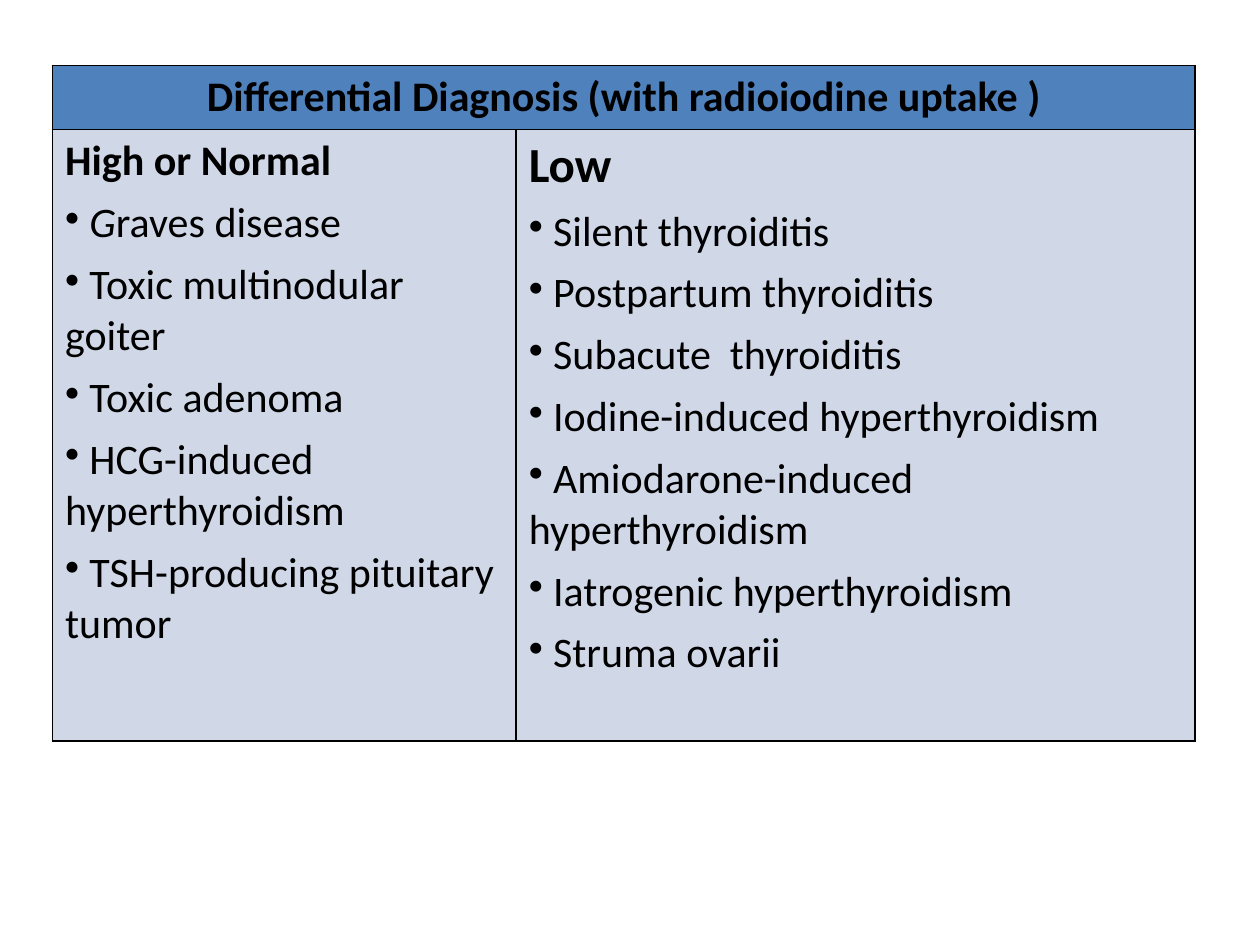
from dataclasses import dataclass

from lxml.etree import SubElement
from pptx import Presentation
from pptx.dml.color import RGBColor
from pptx.enum.text import PP_ALIGN
from pptx.oxml.ns import qn
from pptx.util import Pt


@dataclass(frozen=True)
class Theme:
    font: str = "Calibri"
    body: int = 24
    large: int = 28
    space_after: int = 6
    border: int = 1
    ink: str = "000000"
    header: str = "4F81BD"
    panel: str = "D0D8E8"


THEME = Theme()

TITLE = "Differential Diagnosis (with radioiodine uptake )"

# Heading, heading size, causes
COLUMNS = [
    ("High or Normal", THEME.body, [
        "Graves disease",
        "Toxic multinodular goiter",
        "Toxic adenoma",
        "HCG-induced hyperthyroidism",
        "TSH-producing pituitary tumor",
    ]),
    ("Low", THEME.large, [
        "Silent thyroiditis",
        "Postpartum thyroiditis",
        "Subacute  thyroiditis",
        "Iodine-induced hyperthyroidism",
        "Amiodarone-induced hyperthyroidism",
        "Iatrogenic hyperthyroidism",
        "Struma ovarii",
    ]),
]


def style_cell(cell, fill):
    # Borders come before the fill in the cell properties
    tcPr = cell._tc.get_or_add_tcPr()
    for side in ("a:lnL", "a:lnR", "a:lnT", "a:lnB"):
        ln = SubElement(tcPr, qn(side), w=str(Pt(THEME.border)))
        solid = SubElement(ln, qn("a:solidFill"))
        SubElement(solid, qn("a:srgbClr"), val=THEME.ink)
    cell.fill.solid()
    cell.fill.fore_color.rgb = RGBColor.from_string(fill)


def style_paragraph(p, size=THEME.body, bold=False):
    p.space_after = Pt(THEME.space_after)
    p.font.name = THEME.font
    p.font.size = Pt(size)
    p.font.bold = bold
    p.font.color.rgb = RGBColor.from_string(THEME.ink)


def add_heading(p, text, size=THEME.body):
    p.add_run().text = text
    style_paragraph(p, size, bold=True)


def add_bullet(tf, text):
    p = tf.add_paragraph()
    SubElement(p._p.get_or_add_pPr(), qn("a:buChar"), char="•")
    style_paragraph(p)
    # The initial of Graves is set in italics
    split = 1 if text.startswith("Graves") else 0
    if split:
        r = p.add_run()
        r.text = " " + text[:split]
        r.font.italic = True
    p.add_run().text = text[split:] if split else " " + text


def add_diagnosis_table(s):
    widths, heights = (265, 388), (36.7, 349.3)
    table = s.shapes.add_table(2, 2, Pt(30), Pt(37.4),
                               Pt(sum(widths)), Pt(sum(heights))).table
    for column, width in zip(table.columns, widths):
        column.width = Pt(width)
    for row, height, fill in zip(table.rows, heights, (THEME.header, THEME.panel)):
        row.height = Pt(height)
        for cell in row.cells:
            style_cell(cell, fill)

    # Title row across both columns
    title = table.cell(0, 0)
    title.merge(table.cell(0, 1))
    p = title.text_frame.paragraphs[0]
    add_heading(p, TITLE)
    p.alignment = PP_ALIGN.CENTER

    # Causes by uptake
    for i, (heading, size, causes) in enumerate(COLUMNS):
        tf = table.cell(1, i).text_frame
        add_heading(tf.paragraphs[0], heading, size)
        for cause in causes:
            add_bullet(tf, cause)


def main():
    prs = Presentation()
    prs.slide_width, prs.slide_height = Pt(720), Pt(540)
    s = prs.slides.add_slide(prs.slide_layouts[6])
    add_diagnosis_table(s)
    prs.save("out.pptx")


if __name__ == "__main__":
    main()
